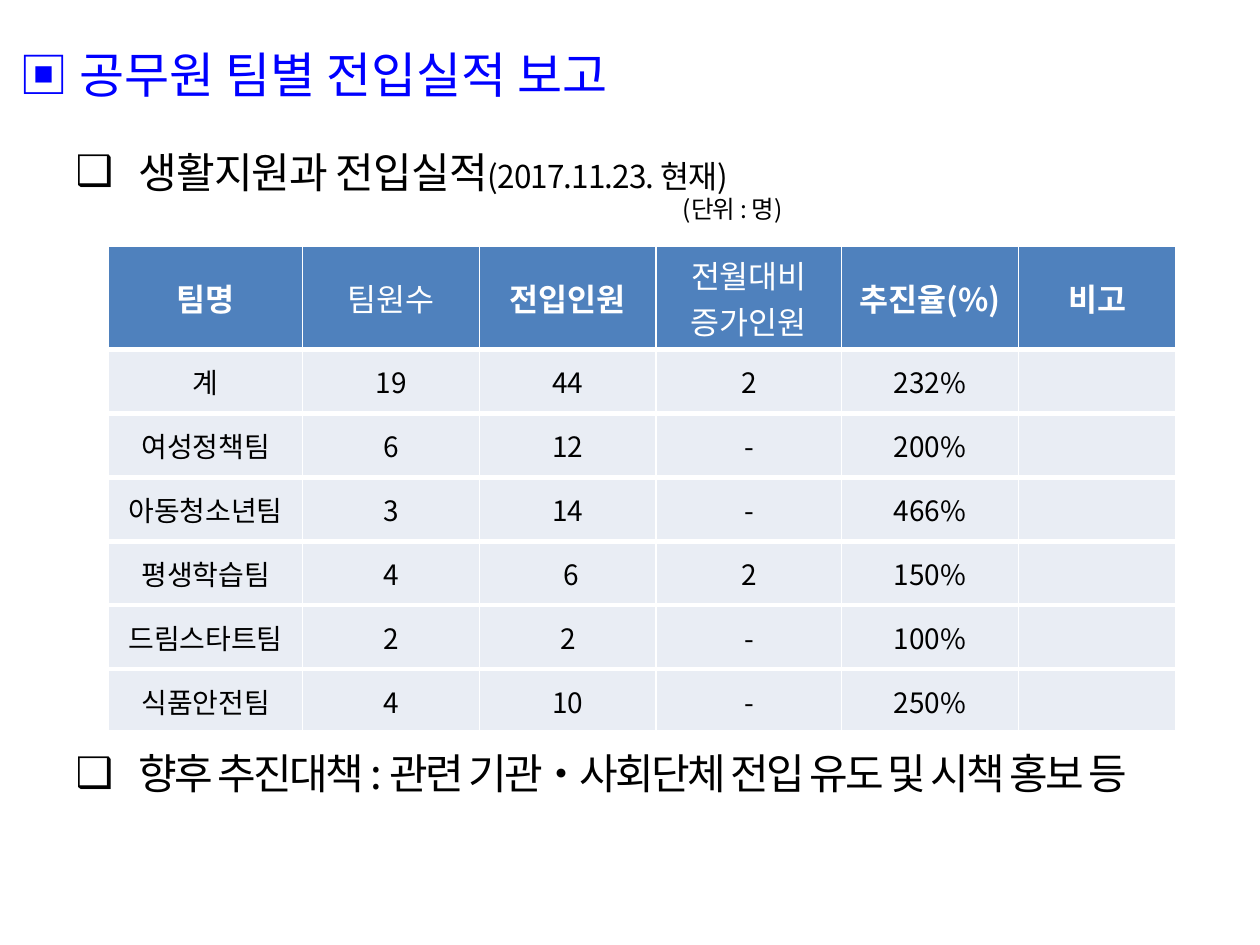
from pptx import Presentation
from pptx.dml.color import RGBColor
from pptx.enum.text import MSO_ANCHOR, MSO_AUTO_SIZE, PP_ALIGN
from pptx.oxml import parse_xml
from pptx.oxml.ns import nsdecls, qn
from pptx.util import Pt

FONT = "Noto Sans CJK KR"
HEX = {"title": "0000FF", "text": "000000", "head": "4F81BD",
       "row": "E9EDF4", "line": "FFFFFF"}


def style(font, size, color, bold=False, track=0):
    font.name, font.size, font.bold = FONT, Pt(size), bold
    font.color.rgb = RGBColor.from_string(HEX[color])
    props = font._element if hasattr(font, "_element") else font._rPr
    props.find(qn("a:latin")).addnext(
        parse_xml(f'<a:ea {nsdecls("a")} typeface="{FONT}"/>'))
    if track:
        props.set("spc", str(track))


def place(shape, left, top, width, height):
    shape.left, shape.top = Pt(left), Pt(top)
    shape.width, shape.height = Pt(width), Pt(height)
    shape.text_frame.auto_size = MSO_AUTO_SIZE.NONE
    return shape.text_frame


prs = Presentation()
prs.slide_width, prs.slide_height = Pt(720), Pt(540)
slide = prs.slides.add_slide(prs.slide_layouts[1])

# Title
frame = place(slide.shapes.title, 4, 18, 700, 48)
frame.vertical_anchor = MSO_ANCHOR.MIDDLE
para = frame.paragraphs[0]
para.text = "▣ 공무원 팀별 전입실적 보고"
para.alignment = PP_ALIGN.LEFT
style(para.font, 28, "title")

# Body list: runs with sizes, left margin, hanging indent, bullet,
# space before, line spacing, tracking
items = [
    ([("생활지원과 전입실적", 24), ("(2017.11.23. 현재)", 18)],
     72, -36, True, 0, 1.0, -50),
    ([("(단위 : 명)", 14)], 383, 0, False, 0, Pt(15), -50),
    ([("향후 추진대책 : 관련 기관‧사회단체 전입 유도 및 시책 홍보 등", 24)],
     72, -36, True, 300, 1.0, -150),
]
frame = place(slide.placeholders[1], 0, 80, 708, 410)
for i, (runs, left, hang, mark, gap, lead, track) in enumerate(items):
    para = frame.paragraphs[0] if i == 0 else frame.add_paragraph()
    props = para._p.get_or_add_pPr()
    props.set("marL", str(Pt(left)))
    props.set("indent", str(Pt(hang)))
    if mark:
        props.append(parse_xml(
            f'<a:buClr {nsdecls("a")}><a:srgbClr val="{HEX["text"]}"/></a:buClr>'))
        props.append(parse_xml(f'<a:buChar {nsdecls("a")} char="❑"/>'))
    else:
        props.append(parse_xml(f'<a:buNone {nsdecls("a")}/>'))
    para.space_before, para.line_spacing = Pt(gap), lead
    style(para.font, runs[0][1], "text", track=track)
    for text, size in runs:
        run = para.add_run()
        run.text = text
        if size != runs[0][1]:
            run.font.size = Pt(size)

# Table of results by team
rows = [
    ["팀명", "팀원수", "전입인원", "전월대비 증가인원", "추진율(%)", "비고"],
    ["계", "19", "44", "2", "232%", ""],
    ["여성정책팀", "6", "12", "-", "200%", ""],
    ["아동청소년팀", "3", "14", "-", "466%", ""],
    ["평생학습팀", "4", " 6", "2", "150%", ""],
    ["드림스타트팀", "2", "2", "-", "100%", ""],
    ["식품안전팀", "4", "10", "-", "250%", ""],
]
wide = [111, 101, 101, 106, 101, 90]
high = [59] + [36.5] * 6
light = {1, 3}  # header columns that are not bold
table = slide.shapes.add_table(len(rows), len(wide), Pt(62), Pt(140.5),
                               Pt(sum(wide)), Pt(sum(high))).table
table.horz_banding = False
for col, width in zip(table.columns, wide):
    col.width = Pt(width)
for r, row in enumerate(rows):
    table.rows[r].height = Pt(high[r])
    head = r == 0
    for c, text in enumerate(row):
        cell = table.cell(r, c)
        cell.vertical_anchor = MSO_ANCHOR.MIDDLE
        cell.fill.solid()
        cell.fill.fore_color.rgb = RGBColor.from_string(
            HEX["head" if head else "row"])
        para = cell.text_frame.paragraphs[0]
        para.text = text
        para.alignment = PP_ALIGN.CENTER
        style(para.font, 18 if head else 16, "line" if head else "text",
              bold=head and c not in light)
        edges = {"L": 1, "R": 1, "T": 1 if head else 3, "B": 3}
        for i, (side, width) in enumerate(edges.items()):
            cell._tc.get_or_add_tcPr().insert(i, parse_xml(
                f'<a:ln{side} {nsdecls("a")} w="{Pt(width)}"><a:solidFill>'
                f'<a:srgbClr val="{HEX["line"]}"/></a:solidFill></a:ln{side}>'))

prs.save("out.pptx")
